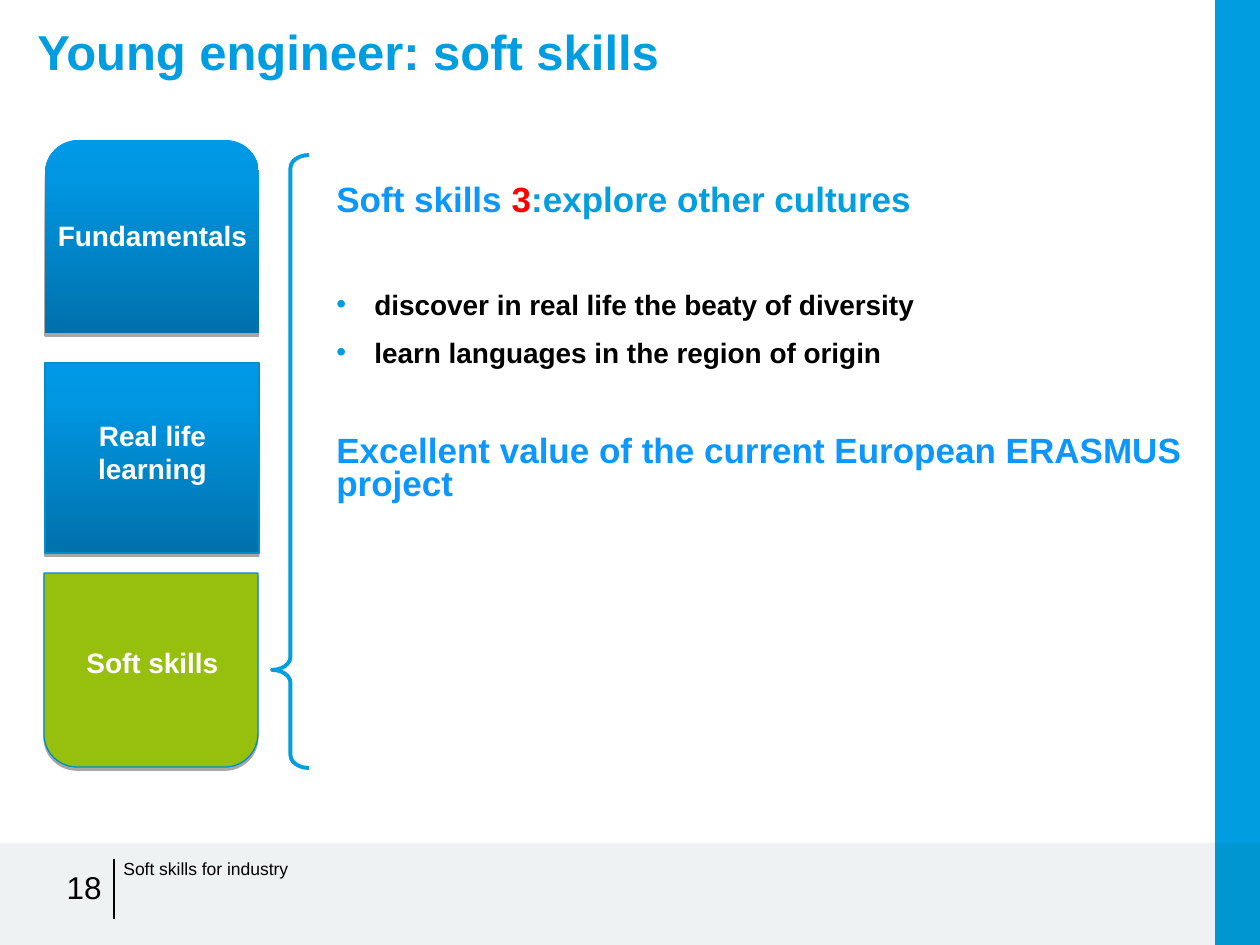
from lxml import etree
from pptx import Presentation
from pptx import util as u
from pptx.dml import color
from pptx.enum import shapes, text
from pptx.oxml import parse_xml
from pptx.oxml import ns

PX = 914400 / 126
rgb = color.RGBColor.from_string
BLUE, BRIGHT, BLACK, WHITE = "009EE0", "0B97FD", "000000", "FFFFFF"
MIDDLE = text.MSO_ANCHOR.MIDDLE
ALIGN = text.PP_ALIGN

presentation = Presentation()
presentation.slide_width, presentation.slide_height = u.Inches(10), u.Inches(7.5)
slide = presentation.slides.add_slide(presentation.slide_layouts[6])


def add_shape(kind, box, fill=None, line=None, width=0.75):
    shape = slide.shapes.add_shape(kind, *[round(n * PX) for n in box])
    shape.shadow.inherit = False
    if fill:
        shape.fill.solid()
        shape.fill.fore_color.rgb = rgb(fill)
    else:
        shape.fill.background()
    if line:
        shape.line.color.rgb = rgb(line)
        shape.line.width = u.Pt(width)
    else:
        shape.line.fill.background()
    return shape


def add_text(box, words, size, ink, bold=False, align=ALIGN.LEFT, anchor=MIDDLE):
    frame = slide.shapes.add_textbox(*[round(n * PX) for n in box]).text_frame
    frame.word_wrap = True
    frame.vertical_anchor = anchor
    frame.text = words
    for paragraph in frame.paragraphs:
        paragraph.alignment = align
        for run in paragraph.runs:
            run.font.name, run.font.size, run.font.bold = "Arial", u.Pt(size), bold
            run.font.color.rgb = rgb(ink)
    return frame


# Footer band, side bar and divider
RECTANGLE = shapes.MSO_SHAPE.RECTANGLE
footer = add_shape(RECTANGLE, (0, 843, 1260, 102), "BDC7C8")
footer_color = footer.fill._xPr.find(".//" + ns.qn("a:srgbClr"))
etree.SubElement(footer_color, ns.qn("a:alpha"), val="23000")
add_shape(RECTANGLE, (1215, 0, 45, 945), BLUE)
add_shape(RECTANGLE, (1215, 843, 45, 102), "0096D2")
divider = slide.shapes.add_connector(
    shapes.MSO_CONNECTOR.STRAIGHT, *[round(n * PX) for n in (114, 859, 114, 919)])
divider.line.color.rgb = rgb(BLACK)
divider.line.width = u.Pt(0.75)
etree.SubElement(divider._element.spPr, ns.qn("a:effectLst"))

# Footer texts and title
add_text((111, 852, 399, 34), "Soft skills for industry", 10, BLACK)
add_text((32, 856, 82, 62), "18", 18, BLACK, align=ALIGN.RIGHT)
title = add_text((25, 20, 1134, 81), "Young engineer: soft skills", 28, BLUE,
                 bold=True, anchor=text.MSO_ANCHOR.TOP)
title.paragraphs[0].line_spacing = 0.95

# Skill blocks: kind, box, corner sizes, fill (None is the gradient), line, label top and height
ROUND = shapes.MSO_SHAPE.ROUND_2_SAME_RECTANGLE
blocks = [
    ("Fundamentals", ROUND, (45, 140, 214, 193), (0.17, 0), None, None, 218, 34),
    ("Real life learning", RECTANGLE, (45, 363, 214, 190), (), None, "008ECB", 418, 68),
    ("Soft skills", ROUND, (44, 573, 214, 194), (0, 0.17), "97BF0D", "008ECB", 645, 34),
]
stops = "".join(f'<a:gs pos="{position}"><a:srgbClr val="{stop}"/></a:gs>' for position, stop in
                [(0, "0099E8"), (20000, "0096E2"), (100000, "0071AC")])
gradient = (f'<a:gradFill {ns.nsdecls("a")}><a:gsLst>{stops}</a:gsLst>'
            '<a:lin ang="5400000" scaled="0"/></a:gradFill>')
shadow = (f'<a:outerShdw {ns.nsdecls("a")} blurRad="0" dist="22860" dir="5400000" rotWithShape="0">'
          '<a:srgbClr val="000000"><a:alpha val="35000"/></a:srgbClr></a:outerShdw>')
for label, kind, box, corners, fill, line, label_top, label_height in blocks:
    block = add_shape(kind, box, fill, line)
    for index, corner in enumerate(corners):
        block.adjustments[index] = corner
    properties = block._element.spPr
    if not fill:
        properties.replace(properties.find(ns.qn("a:noFill")), parse_xml(gradient))
    properties.find(ns.qn("a:effectLst")).append(parse_xml(shadow))
    frame = add_text((57, label_top, 191, label_height), label, 16, WHITE,
                     bold=True, align=ALIGN.CENTER)
    frame.margin_left = frame.margin_right = frame.margin_top = frame.margin_bottom = 0

# Brace pointing at the soft skills block
brace = add_shape(shapes.MSO_SHAPE.LEFT_BRACE, (272, 155, 37, 613), line="019EE0", width=2.25)
brace.adjustments[0], brace.adjustments[1] = 0.35, 0.84

# Body: runs, size, space before, bulleted
body = add_text((324, 176, 893, 597), "", 20, BRIGHT, anchor=text.MSO_ANCHOR.TOP)
body.margin_top = u.Inches(0.08)
content = [
    ([("Soft skills ", BRIGHT), ("3", "FF0000"), (":explore other cultures", "019EE0")], 20, 0, False),
    ([("discover in real life the beaty of diversity", BLACK)], 16, 42.4, True),
    ([("learn languages in the region of origin", BLACK)], 16, 12, True),
    ([("Excellent value of the current European ERASMUS project", BRIGHT)], 20, 38.7, False),
]
for index, (runs, size, space, bulleted) in enumerate(content):
    paragraph = body.add_paragraph() if index else body.paragraphs[0]
    paragraph.line_spacing = 0.8
    paragraph.space_before = u.Pt(space)
    if bulleted:
        settings = paragraph._p.get_or_add_pPr()
        settings.set("marL", str(round(38 * PX)))
        settings.set("indent", str(round(-38 * PX)))
        bullet_color = etree.SubElement(settings, ns.qn("a:buClr"))
        etree.SubElement(bullet_color, ns.qn("a:srgbClr"), val=BLUE)
        etree.SubElement(settings, ns.qn("a:buFont"), typeface="Arial")
        etree.SubElement(settings, ns.qn("a:buChar"), char="•")
    for words, ink in runs:
        run = paragraph.add_run()
        run.text = words
        run.font.name, run.font.size, run.font.bold = "Arial", u.Pt(size), True
        run.font.color.rgb = rgb(ink)

presentation.save("out.pptx")
